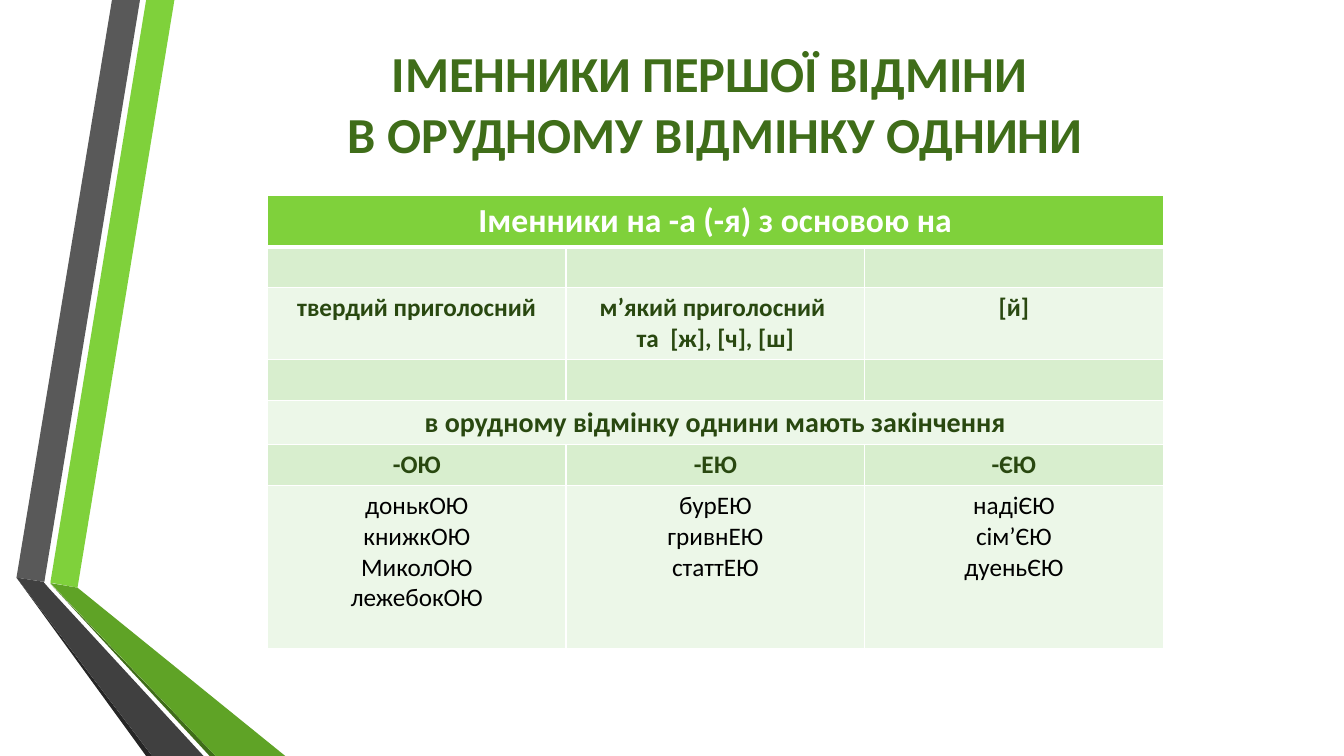
"""Build a slide on the instrumental case of first-declension nouns."""
from typing import NamedTuple

from lxml.etree import SubElement
from pptx import Presentation
from pptx.dml.color import RGBColor as Rgb
from pptx.enum.text import MSO_ANCHOR as Anchor, PP_ALIGN as Align
from pptx.oxml.ns import qn
from pptx.util import Pt

FONT = "Calibri"
HUES = {
    "lime": "7FD13B", "leaf": "5FA326", "moss": "3F6D19", "pine": "294810",
    "grey": "595959", "coal": "404040", "soot": "262626", "black": "000000",
    "white": "FFFFFF", "pale": "ECF7E8", "mint": "D8EECE",
}


class Band(NamedTuple):
    hue: str
    dots: list[tuple[float, float]]


class Row(NamedTuple):
    high: float
    fill: str
    texts: list[str]
    size: int = 18
    hue: str = "pine"
    bold: bool = True


BANDS = [
    Band("lime", [(36, 416.2), (55.4, 419.8), (124.6, 0), (104.4, 0)]),
    Band("grey", [(100, 0), (80, 0), (11.8, 412.6), (31.7, 415.6)]),
    Band("soot", [(11.8, 412.6), (104.4, 540), (108.7, 540)]),
    Band("moss", [(36, 416.9), (149.8, 540), (154.1, 540)]),
    Band("leaf", [(36, 416.5), (154.1, 540), (203.8, 540), (55.4, 419.8)]),
    Band("coal", [(145.4, 540), (34.6, 419.8), (31, 415.6), (11.8, 412.6),
                  (108.7, 540)]),
]
TITLE = "ІМЕННИКИ ПЕРШОЇ ВІДМІНИ \vВ ОРУДНОМУ ВІДМІНКУ ОДНИНИ"
ROWS = [
    Row(36.5, "lime", ["Іменники на -а (-я) з основою на"], 24, "white"),
    Row(29.2, "mint", ["", "", ""]),
    Row(51.4, "pale", ["твердий приголосний",
                       "м’який приголосний \nта  [ж], [ч], [ш]", "[й]"]),
    Row(29.2, "mint", ["", "", ""]),
    Row(31.6, "pale", ["в орудному відмінку однини мають закінчення"], 20),
    Row(29.2, "mint", ["-ОЮ", "-ЕЮ", "-ЄЮ"]),
    Row(116.4, "pale", ["донькОЮ\nкнижкОЮ\nМиколОЮ\nлежебокОЮ",
                        "бурЕЮ\nгривнЕЮ\nстаттЕЮ",
                        "надіЄЮ\nсім’ЄЮ\nдуеньЄЮ"], bold=False, hue="black"),
]
COLS, WIDE = 3, 213.3


def tint(hue: str) -> Rgb:
    return Rgb.from_string(HUES[hue])


def write(frame, text: str, size: int, hue: str, bold: bool) -> None:
    frame.text = text
    for para in frame.paragraphs:
        para.alignment = Align.CENTER
        para.font.size = Pt(size)
        for run in para.runs:
            font = run.font
            font.name, font.size, font.bold = FONT, Pt(size), bold
            font.color.rgb = tint(hue)


def draw_band(slide, band: Band) -> None:
    dots = [(Pt(x), Pt(y)) for x, y in band.dots]
    form = slide.shapes.build_freeform(*dots[0])
    form.add_line_segments(dots[1:])
    shape = form.convert_to_shape()
    shape.shadow.inherit = False
    shape.fill.solid()
    shape.fill.fore_color.rgb = tint(band.hue)
    shape.line.fill.background()


def draw_title(slide) -> None:
    box = slide.shapes.add_textbox(Pt(116.6), Pt(15.1), Pt(789.1), Pt(116.6))
    frame = box.text_frame
    frame.word_wrap = True
    frame.vertical_anchor = Anchor.MIDDLE
    write(frame, TITLE, 36, "moss", True)


def edge(cell, top: float, base: float) -> None:
    props = cell._tc.get_or_add_tcPr()
    sides = {"L": 1, "R": 1, "T": top, "B": base}
    for spot, (side, width) in enumerate(sides.items()):
        line = SubElement(props, qn(f"a:ln{side}"), w=str(Pt(width)))
        fill = SubElement(line, qn("a:solidFill"))
        SubElement(fill, qn("a:srgbClr"), val=HUES["white"])
        props.insert(spot, line)


def draw_table(slide) -> None:
    high = sum(row.high for row in ROWS)
    table = slide.shapes.add_table(
        len(ROWS), COLS, Pt(191), Pt(139.8), Pt(WIDE * COLS), Pt(high)).table
    table.first_row = table.horz_banding = False
    for col in table.columns:
        col.width = Pt(WIDE)
    for num, row in enumerate(ROWS):
        table.rows[num].height = Pt(row.high)
        for col in range(COLS):
            cell = table.cell(num, col)
            cell.fill.solid()
            cell.fill.fore_color.rgb = tint(row.fill)
            edge(cell, 3 if num == 1 else 1, 3 if num == 0 else 1)
        for col, text in enumerate(row.texts):
            write(table.cell(num, col).text_frame, text, row.size, row.hue,
                  row.bold)
        if len(row.texts) == 1:
            table.cell(num, 0).merge(table.cell(num, COLS - 1))


def main() -> None:
    deck = Presentation()
    deck.slide_width, deck.slide_height = Pt(960), Pt(540)
    slide = deck.slides.add_slide(deck.slide_layouts[6])
    for band in BANDS:
        draw_band(slide, band)
    draw_title(slide)
    draw_table(slide)
    deck.save("out.pptx")


if __name__ == "__main__":
    main()
